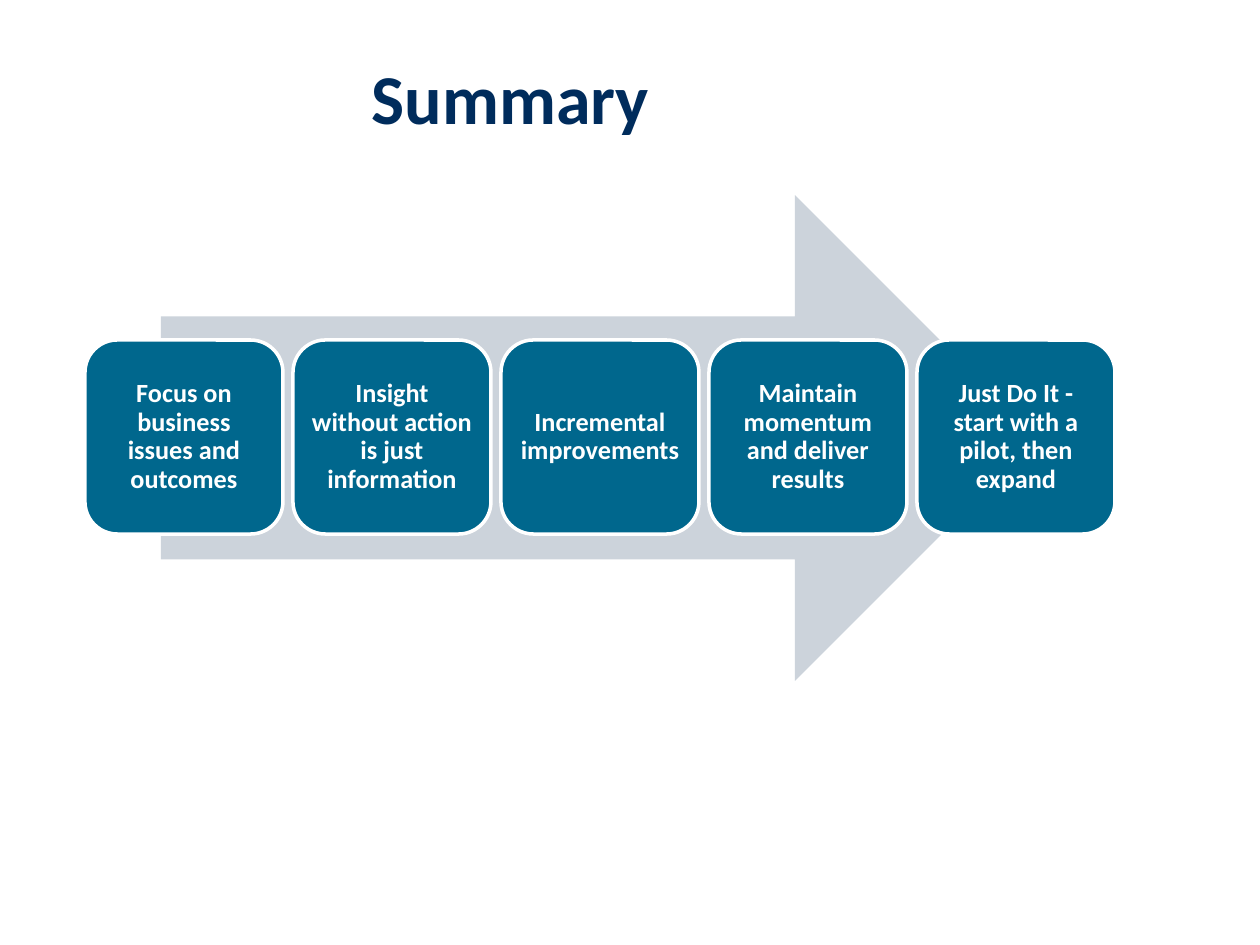
import pptx
import pptx.util
from pptx.dml.color import RGBColor
from pptx.enum.shapes import MSO_SHAPE
from pptx.enum.text import MSO_ANCHOR, MSO_AUTO_SIZE, PP_ALIGN

TITLE = "Summary"
STEPS = [
    "Focus on business issues and outcomes",
    "Insight without action is just information",
    "Incremental improvements",
    "Maintain momentum and deliver results",
    "Just Do It - start with a pilot, then expand",
]
COLORS = {"navy": "002C5C", "teal": "00678D", "arrow": "CCD3DB", "white": "FFFFFF"}

# Lengths in px, 126 to the inch
PX = 914400 // 126
SLIDE = (1260, 945)
TITLE_BOX = (63, 38, 895, 117)
ARROW_BOX = (161, 195, 877, 486)
STEP_LEFT, STEP_TOP, STEP_W, STEP_H = 85, 340, 198, 194
STEP_PITCH = 208
STEP_INSET = 8


def color(name):
    return RGBColor.from_string(COLORS[name])


def emu(lengths):
    return [n * PX for n in lengths]


def write(sp, text, size, color_name, **paragraph_format):
    tf = sp.text_frame
    frame_format = {"word_wrap": True, "auto_size": MSO_AUTO_SIZE.NONE,
                    "vertical_anchor": MSO_ANCHOR.MIDDLE}
    for name, value in frame_format.items():
        setattr(tf, name, value)
    p = tf.paragraphs[0]
    for name, value in {"alignment": PP_ALIGN.CENTER, **paragraph_format}.items():
        setattr(p, name, value)
    r = p.add_run()
    r.text = text
    font_format = {"name": "Calibri", "size": pptx.util.Pt(size), "bold": True}
    for name, value in font_format.items():
        setattr(r.font, name, value)
    r.font.color.rgb = color(color_name)


def add_filled(s, kind, box, fill):
    sp = s.shapes.add_shape(kind, *emu(box))
    sp.shadow.inherit = False
    sp.fill.solid()
    sp.fill.fore_color.rgb = color(fill)
    sp.line.fill.background()
    return sp


def add_step(s, index, text):
    box = (STEP_LEFT + index * STEP_PITCH, STEP_TOP, STEP_W, STEP_H)
    sp = add_filled(s, MSO_SHAPE.ROUNDED_RECTANGLE, box, "teal")
    sp.line.color.rgb = color("white")
    sp.line.width = pptx.util.Pt(2)
    for side in ("left", "top", "right", "bottom"):
        setattr(sp.text_frame, f"margin_{side}", STEP_INSET * PX)
    write(sp, text, 15, "white", line_spacing=0.9)


def main():
    prs = pptx.Presentation()
    prs.slide_width, prs.slide_height = emu(SLIDE)
    s = prs.slides.add_slide(prs.slide_layouts[5])
    title = s.shapes.title
    title.left, title.top, title.width, title.height = emu(TITLE_BOX)
    write(title, TITLE, 40, "navy")
    add_filled(s, MSO_SHAPE.RIGHT_ARROW, ARROW_BOX, "arrow")
    for index, text in enumerate(STEPS):
        add_step(s, index, text)
    prs.save("out.pptx")


if __name__ == "__main__":
    main()
